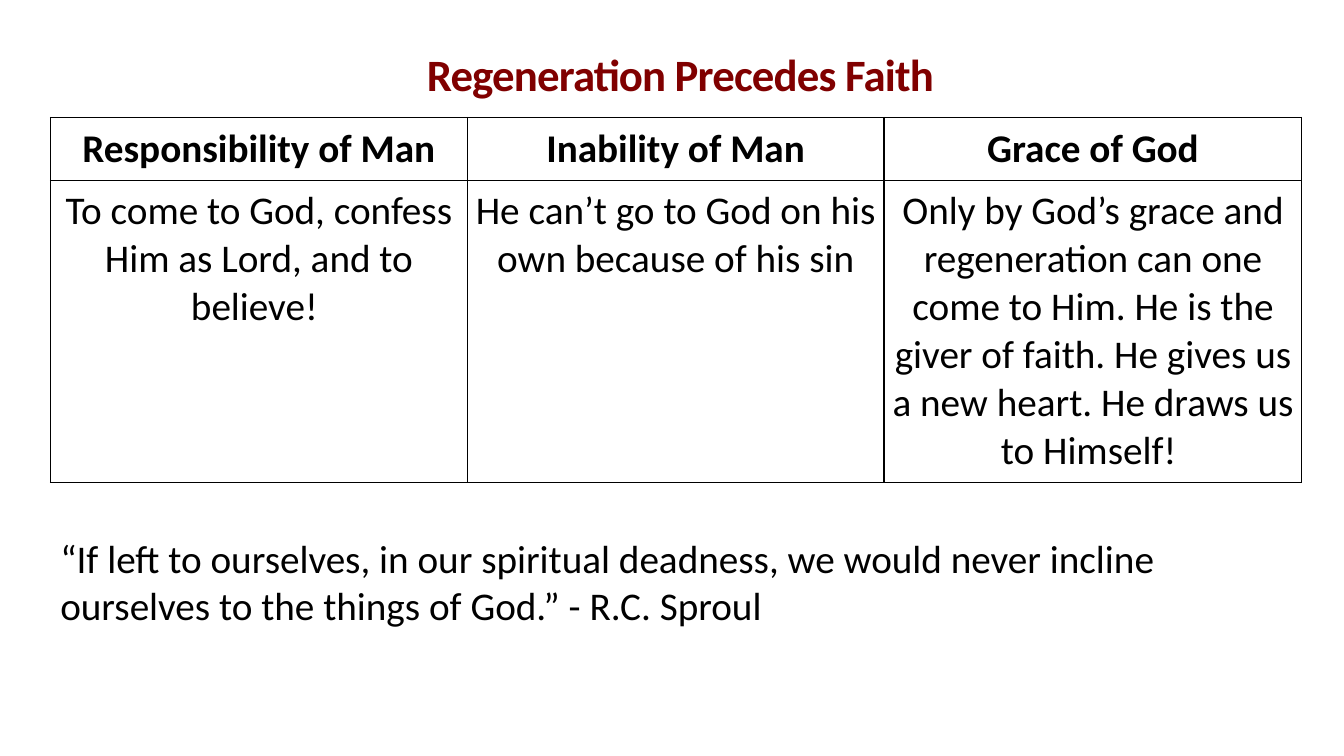
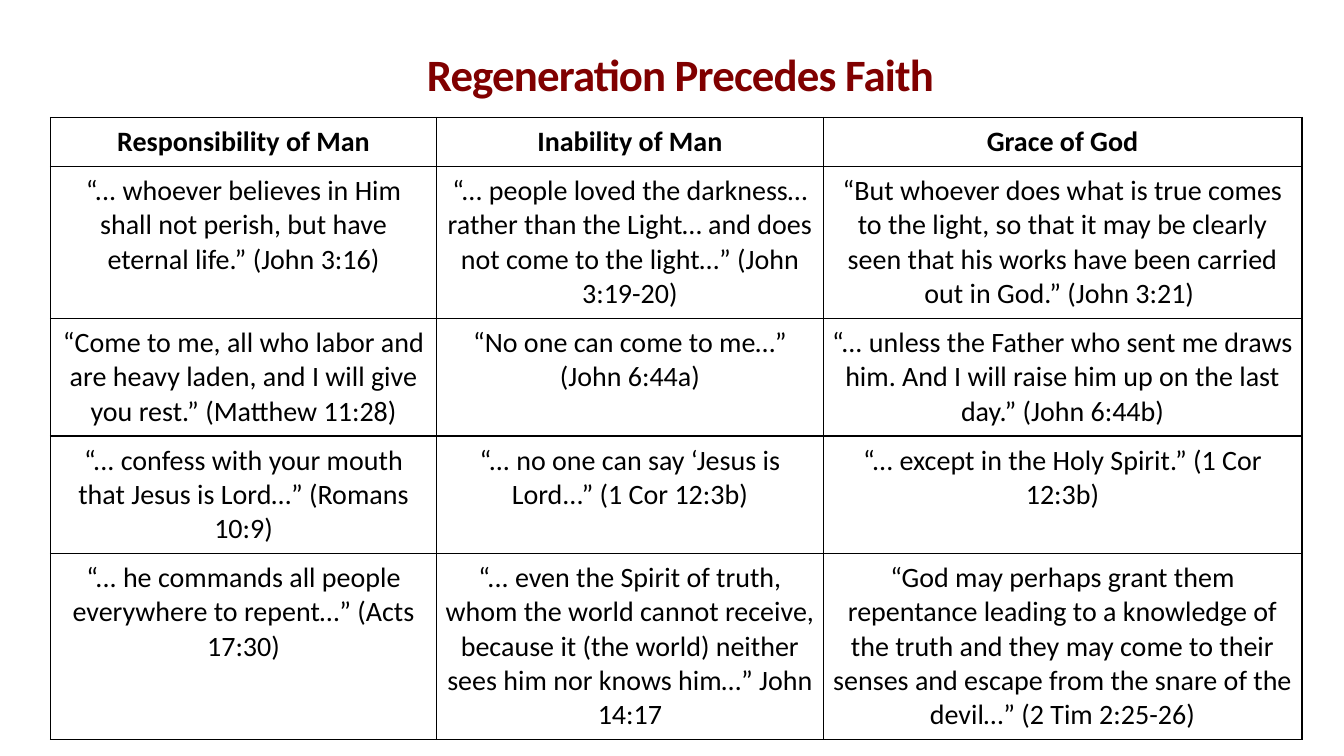
from lxml.etree import SubElement
from pptx import Presentation
from pptx.dml.color import RGBColor
from pptx.enum.text import MSO_ANCHOR, MSO_AUTO_SIZE as AutoSize, PP_ALIGN as Align
from pptx.oxml.ns import qn
from pptx.util import Emu, Pt

PX = 9525
TITLE = "Regeneration Precedes Faith"
HEADINGS = ["Responsibility of Man", "Inability of Man", "Grace of God"]


def px(length):
    return Emu(length * PX)


def rgb(color):
    return RGBColor.from_string(color)


class Deck:
    FONT = "Calibri"
    INK = "000000"
    ACCENT = "800000"
    LEFT, WIDTH = 48, 1192
    TABLE_TOP = 112
    CELL_MARGIN = 7

    def __init__(self):
        self.presentation = Presentation()
        self.presentation.slide_width = px(1280)
        self.presentation.slide_height = px(720)
        self.slide = None

    def set_text(self, frame, text, size=28, color=INK, bold=False, align=Align.LEFT,
                 spacing=None):
        """Put one formatted paragraph in a text frame; spacing is in hundredths of a point."""
        frame.word_wrap = True
        paragraph = frame.paragraphs[0]
        paragraph.alignment = align
        run = paragraph.add_run()
        run.text = text
        run.font.name = self.FONT
        run.font.size = Pt(size)
        run.font.bold = bold
        run.font.color.rgb = rgb(color)
        if spacing is not None:
            run._r.get_or_add_rPr().set("spc", str(spacing))

    def add_slide(self, title):
        self.slide = self.presentation.slides.add_slide(self.presentation.slide_layouts[5])
        shape = self.slide.shapes.title
        shape.left, shape.top, shape.width, shape.height = map(px, (16, 48, 1264, 44))
        frame = shape.text_frame
        frame.auto_size = AutoSize.NONE
        frame.vertical_anchor = MSO_ANCHOR.MIDDLE
        self.set_text(frame, title, size=32, color=self.ACCENT, bold=True,
                      align=Align.CENTER, spacing=-60)

    def add_text(self, text, top, height):
        box = self.slide.shapes.add_textbox(px(self.LEFT), px(top), px(self.WIDTH), px(height))
        self.set_text(box.text_frame, text)
        box.text_frame.auto_size = AutoSize.SHAPE_TO_FIT_TEXT

    def outline(self, cell):
        properties = cell._tc.get_or_add_tcPr()
        for side in ("a:lnL", "a:lnR", "a:lnT", "a:lnB"):
            line = SubElement(properties, qn(side), w=str(Pt(1)))
            fill = SubElement(line, qn("a:solidFill"))
            SubElement(fill, qn("a:srgbClr"), val=self.INK)

    def add_table(self, rows, widths, heights, size):
        frame = self.slide.shapes.add_table(
            len(rows), len(widths), px(self.LEFT), px(self.TABLE_TOP),
            px(sum(widths)), px(sum(heights)))
        table = frame.table
        table.first_row = table.horz_banding = False
        for column, width in zip(table.columns, widths):
            column.width = px(width)
        for index, (row, height, texts) in enumerate(zip(table.rows, heights, rows)):
            row.height = px(height)
            for cell, text in zip(row.cells, texts):
                margin = px(self.CELL_MARGIN)
                cell.margin_left = cell.margin_right = margin
                cell.margin_top = cell.margin_bottom = margin
                self.outline(cell)
                cell.fill.background()
                self.set_text(cell.text_frame, text, size=size, bold=index == 0,
                              align=Align.CENTER)


def main():
    deck = Deck()

    deck.add_slide(TITLE)
    summary = [
        "To come to God, confess Him as Lord, and to believe! ",
        "He can’t go to God on his own because of his sin",
        "Only by God’s grace and regeneration can one come to Him. He is the giver of faith. "
        "He gives us a new heart. He draws us to Himself! ",
    ]
    deck.add_table([HEADINGS, summary], [397, 397, 398], [59, 287], size=28)
    deck.add_text("“If left to ourselves, in our spiritual deadness, we would never incline "
                  "ourselves to the things of God.” - R.C. Sproul", top=504, height=100)

    deck.add_slide(TITLE)
    verses = [
        ["“... whoever believes in Him shall not perish, but have eternal life.” (John 3:16)",
         "“... people loved the darkness… rather than the Light… and does not come to the "
         "light…” (John 3:19-20)",
         "“But whoever does what is true comes to the light, so that it may be clearly seen "
         "that his works have been carried out in God.” (John 3:21) "],
        ["“Come to me, all who labor and are heavy laden, and I will give you rest.” "
         "(Matthew 11:28)",
         "“No one can come to me…” (John 6:44a)",
         "“... unless the Father who sent me draws him. And I will raise him up on the last "
         "day.” (John 6:44b)"],
        ["“... confess with your mouth that Jesus is Lord…” (Romans 10:9)",
         "“... no one can say ‘Jesus is Lord...” (1 Cor 12:3b)",
         "“... except in the Holy Spirit.” (1 Cor 12:3b)"],
        ["“... he commands all people everywhere to repent…” (Acts 17:30)",
         "“... even the Spirit of truth, whom the world cannot receive, because it (the world) "
         "neither sees him nor knows him…” John 14:17",
         "“God may perhaps grant them repentance leading to a knowledge of the truth and they "
         "may come to their senses and escape from the snare of the devil…” (2 Tim 2:25-26)"],
    ]
    deck.add_table([HEADINGS, *verses], [368, 368, 456], [46, 144, 111, 79, 176], size=20)

    deck.presentation.save("out.pptx")


if __name__ == "__main__":
    main()
